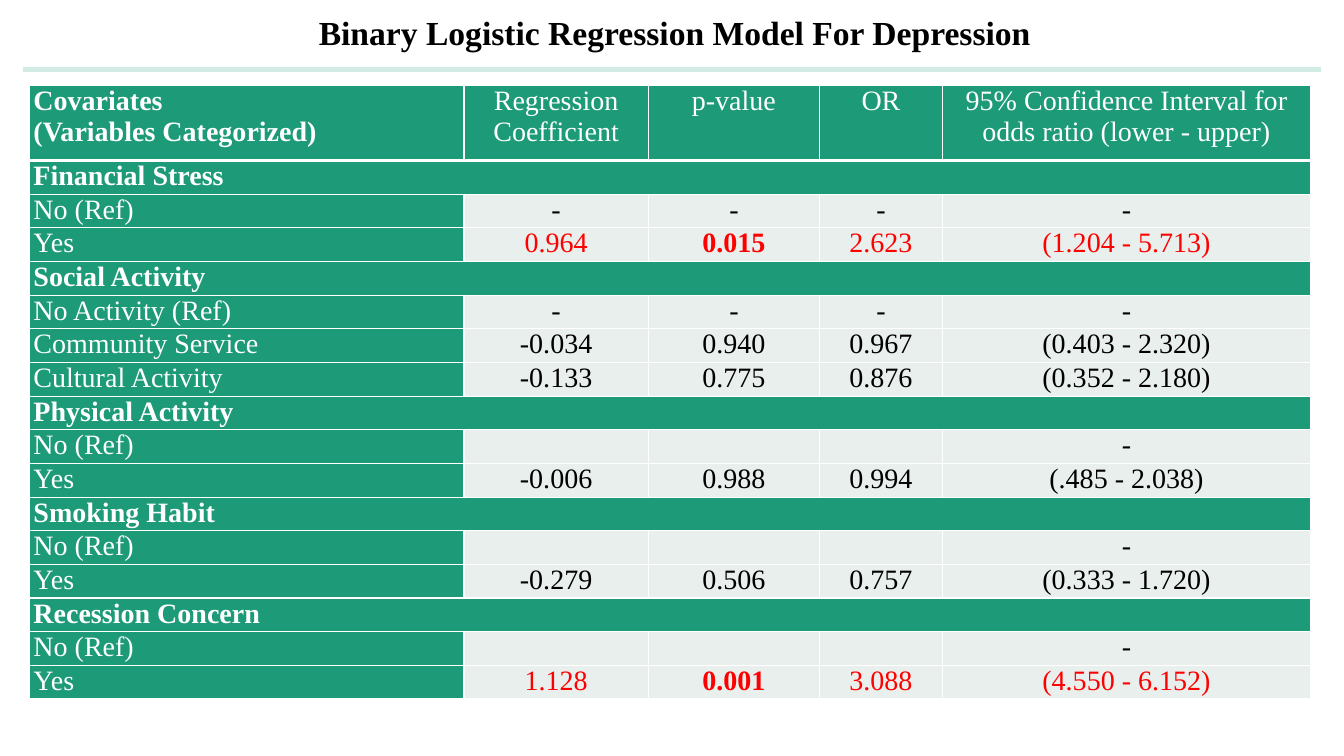
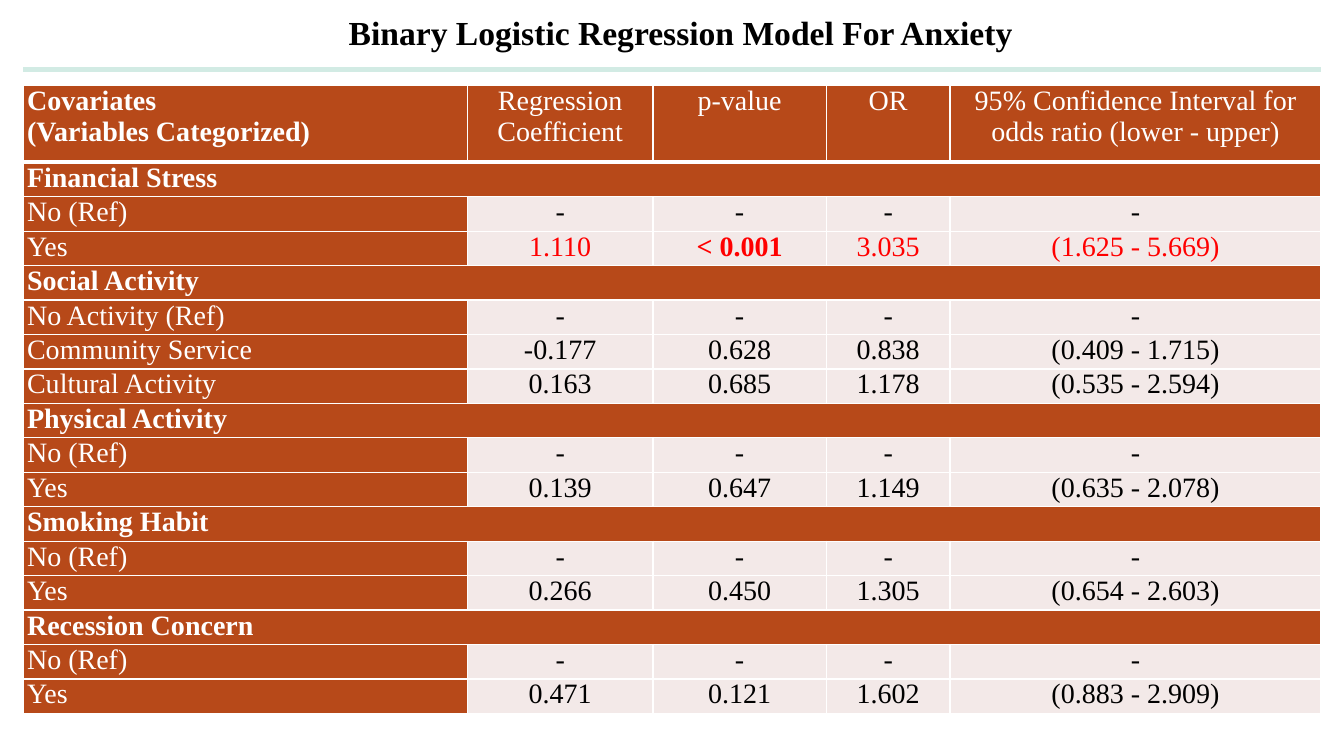
from lxml import etree
from pptx import Presentation
from pptx.dml.color import RGBColor
from pptx.enum.shapes import MSO_CONNECTOR
from pptx.enum.text import MSO_AUTO_SIZE, PP_ALIGN
from pptx.oxml.ns import qn
from pptx.util import Pt

STRAIGHT = MSO_CONNECTOR.STRAIGHT
GROW = MSO_AUTO_SIZE.SHAPE_TO_FIT_TEXT
LEFT, CENTER = PP_ALIGN.LEFT, PP_ALIGN.CENTER

WHITE = RGBColor(0xFF, 0xFF, 0xFF)
BLACK = RGBColor(0x00, 0x00, 0x00)
RED = RGBColor(0xFF, 0x00, 0x00)
MINT = RGBColor(0xD2, 0xEB, 0xE4)
GREEN = RGBColor(0x1D, 0x9A, 0x78)
PALE = RGBColor(0xE8, 0xEF, 0xEC)
RUST = RGBColor(0xB7, 0x49, 0x19)
BLUSH = RGBColor(0xF3, 0xE9, 0xE8)

FONT = "Times New Roman"
LIMIT = 0.05
DASHES = ("-",) * 4
BLANKS = ("", "", "", "-")

HEADS = (
    "Covariates\n(Variables Categorized)",
    "Regression Coefficient",
    "p-value",
    "OR",
    "95% Confidence Interval for odds ratio (lower - upper)",
)
GROUPS = (
    ("Financial Stress", ("No (Ref)", "Yes")),
    ("Social Activity",
     ("No Activity (Ref)", "Community Service", "Cultural Activity")),
    ("Physical Activity", ("No (Ref)", "Yes")),
    ("Smoking Habit", ("No (Ref)", "Yes")),
    ("Recession Concern", ("No (Ref)", "Yes")),
)

MODELS = (
    {
        "name": "Depression", "title": (157, 650), "dark": GREEN, "light": PALE,
        "left": 21.2, "cols": (310.2, 131.7, 122.3, 87.8, 263),
        "head": 53.5, "row": 24.06,
        "data": (
            DASHES,
            ("0.964", "0.015", "2.623", "(1.204 - 5.713)"),
            DASHES,
            ("-0.034", "0.940", "0.967", "(0.403 - 2.320)"),
            ("-0.133", "0.775", "0.876", "(0.352 - 2.180)"),
            BLANKS,
            ("-0.006", "0.988", "0.994", "(.485 - 2.038)"),
            BLANKS,
            ("-0.279", "0.506", "0.757", "(0.333 - 1.720)"),
            BLANKS,
            ("1.128", "0.001", "3.088", "(4.550 - 6.152)"),
        ),
    },
    {
        "name": "Anxiety", "title": (203, 566.6), "dark": RUST, "light": BLUSH,
        "left": 16.6, "cols": (317.3, 132.5, 123.9, 88.4, 265),
        "head": 54.7, "row": 24.62,
        "data": (
            DASHES,
            ("1.110", "˂ 0.001", "3.035", "(1.625 - 5.669)"),
            DASHES,
            ("-0.177", "0.628", "0.838", "(0.409 - 1.715)"),
            ("0.163", "0.685", "1.178", "(0.535 - 2.594)"),
            DASHES,
            ("0.139", "0.647", "1.149", "(0.635 - 2.078)"),
            DASHES,
            ("0.266", "0.450", "1.305", "(0.654 - 2.603)"),
            DASHES,
            ("0.471", "0.121", "1.602", "(0.883 - 2.909)"),
        ),
    },
)


class Deck:
    def __init__(self):
        self.prs = Presentation()
        self.prs.slide_width, self.prs.slide_height = Pt(960), Pt(540)
        self.slide = None

    def page(self):
        self.slide = self.prs.slides.add_slide(self.prs.slide_layouts[6])

    def text(self, frame, text, size, color, bold, align):
        for n, line in enumerate(text.split("\n")):
            para = frame.add_paragraph() if n else frame.paragraphs[0]
            para.alignment = align
            if line:
                run = para.add_run()
                run.text = line
                font = run.font
                font.name, font.size, font.bold = FONT, Pt(size), bold
                font.color.rgb = color

    def title(self, text, left, width):
        box = self.slide.shapes.add_textbox(Pt(left), Pt(5), Pt(width), Pt(36))
        box.text_frame.word_wrap = True
        box.text_frame.auto_size = GROW
        self.text(box.text_frame, text, 24, BLACK, True, CENTER)

    def rule(self):
        line = self.slide.shapes.add_connector(
            STRAIGHT, Pt(16.6), Pt(49.7), Pt(943.4), Pt(49.7))
        line.line.color.rgb = MINT
        line.line.width = Pt(3)
        etree.SubElement(line._element.spPr, qn("a:effectLst"))

    def border(self, cell, top, bottom):
        props = cell._tc.get_or_add_tcPr()
        for side, width in zip("LRTB", (1, 1, top, bottom)):
            edge = etree.SubElement(props, qn("a:ln" + side), w=str(Pt(width)))
            fill = etree.SubElement(edge, qn("a:solidFill"))
            etree.SubElement(fill, qn("a:srgbClr"), val=str(WHITE))

    def cell(self, cell, text, fill, color, bold, align, top=1, bottom=1):
        cell.margin_left = cell.margin_right = Pt(2.7)
        cell.margin_top = cell.margin_bottom = 0
        self.border(cell, top, bottom)
        cell.fill.solid()
        cell.fill.fore_color.rgb = fill
        self.text(cell.text_frame, text, 20, color, bold, align)

    def grid(self, left, cols, heights):
        table = self.slide.shapes.add_table(
            len(heights), len(cols), Pt(left), Pt(61.2),
            Pt(sum(cols)), Pt(sum(heights))).table
        table.first_row = table.horz_banding = False
        for col, width in zip(table.columns, cols):
            col.width = Pt(width)
        for row, height in zip(table.rows, heights):
            row.height = Pt(height)
        return table

    def band(self, table, row, text, dark):
        top = 3 if row == 1 else 1
        for col in range(len(HEADS)):
            self.cell(table.cell(row, col), "" if col else text, dark,
                      WHITE, True, LEFT, top)
        table.cell(row, 0).merge(table.cell(row, len(HEADS) - 1))

    def values(self, table, row, label, data, dark, light):
        self.cell(table.cell(row, 0), label, dark, WHITE, False, LEFT)
        prob = data[1].strip("˂ -")
        strong = bool(prob) and float(prob) < LIMIT
        for col, text in enumerate(data, 1):
            self.cell(table.cell(row, col), text, light,
                      RED if strong else BLACK, strong and col == 2, CENTER)

    def model(self, model):
        self.page()
        self.title("Binary Logistic Regression Model For " + model["name"],
                   *model["title"])
        self.rule()
        dark, light = model["dark"], model["light"]
        count = len(GROUPS) + len(model["data"])
        table = self.grid(model["left"], model["cols"],
                          [model["head"]] + [model["row"]] * count)
        for col, text in enumerate(HEADS):
            self.cell(table.cell(0, col), text, dark, WHITE, col == 0,
                      CENTER if col else LEFT, bottom=3)
        data, row = iter(model["data"]), 1
        for group, labels in GROUPS:
            self.band(table, row, group, dark)
            for row, label in enumerate(labels, row + 1):
                self.values(table, row, label, next(data), dark, light)
            row += 1


def main():
    deck = Deck()
    for model in MODELS:
        deck.model(model)
    deck.prs.save("out.pptx")


if __name__ == "__main__":
    main()
